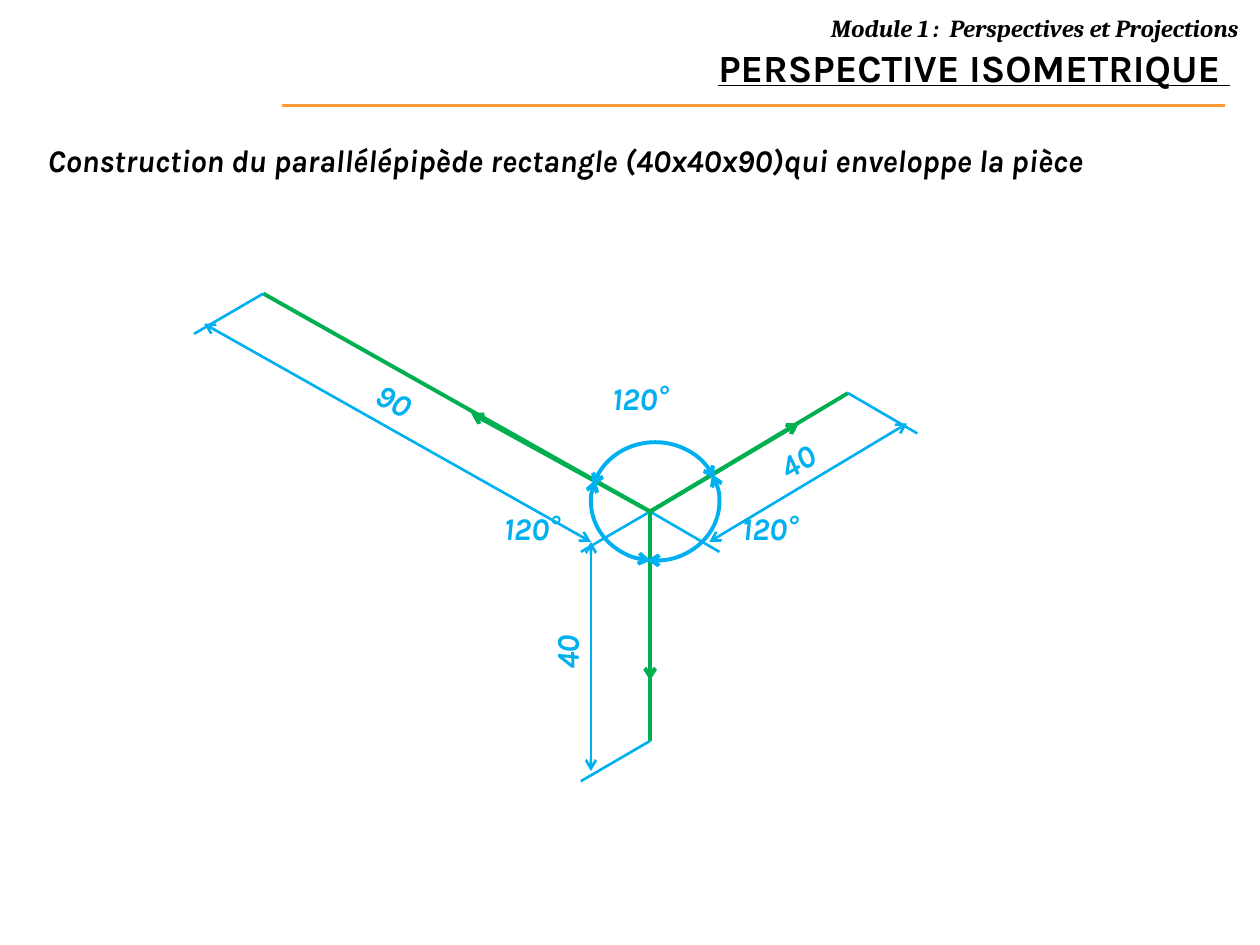
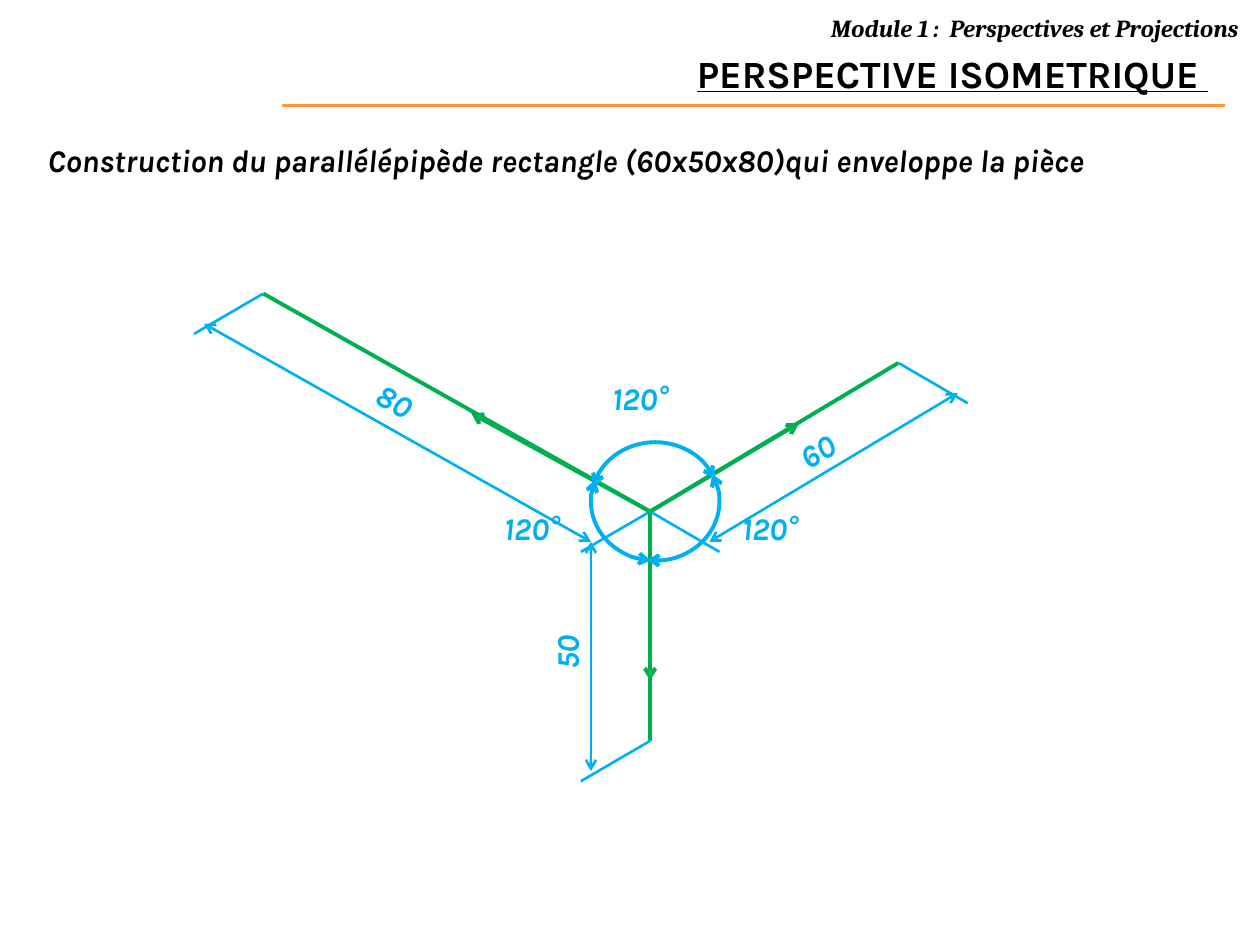
from dataclasses import dataclass
from typing import Optional

from lxml.etree import SubElement
from pptx import Presentation
from pptx.dml.color import RGBColor
from pptx.enum.shapes import MSO_CONNECTOR, MSO_SHAPE
from pptx.enum.text import MSO_ANCHOR, MSO_AUTO_SIZE, PP_ALIGN
from pptx.oxml.ns import qn
from pptx.util import Inches, Pt

COLORS = {
    "text": "000000",
    "background": "FFFFFF",
    "rule": "FF9933",
    "axis": "00B050",
    "dimension": "00B0F0",
}
BODY_FONT = "Karla"
HEADER_FONT = "Cambria"
AXIS_WIDTH = 2.25
THIN_WIDTH = 1.5
TITLE_ONLY_LAYOUT = 5

Point = tuple[float, float]

ORIGIN: Point = (5.16, 4.06)
EXTENSION: Point = (0.55, 0.32)  # extension line, from axis to its outer end
DIMENSION_OFFSET: Point = (0.47, 0.24)  # dimension line, from its axis
ARC_BOX = (4.69, 3.51, 1.02, 0.94)
ARC_ANGLES = [(194.1, 338.9), (334.4, 97.9), (94.3, 200)]  # clockwise degrees from the right
ANGLE_LABELS: list[Point] = [(5.79, 3.99), (4.76, 2.96), (3.9, 3.99)]


@dataclass(frozen=True)
class Axis:
    tip: Point
    arrow: Point
    side: int  # 1: dimensioned on the right, -1: on the left
    length: int
    label_at: Point
    label_rotation: float


@dataclass(frozen=True)
class IsometricSlide:
    title_at: Point
    right: int
    down: int
    left: int
    right_tip: Point
    right_label_at: Point

    def axes(self) -> list[Axis]:
        return [
            Axis(self.right_tip, (6.34, 3.36), 1, self.right, self.right_label_at, 329.9),
            Axis((2.09, 2.33), (3.74, 3.28), -1, self.left, (2.87, 3.01), 29.3),
            Axis((5.16, 5.88), (5.16, 5.4), -1, self.down, (4.21, 4.86), 270),
        ]


SLIDES = [
    IsometricSlide((2.18, 0.3), right=40, down=40, left=90,
                   right_tip=(6.73, 3.12), right_label_at=(6.1, 3.41)),
    IsometricSlide((2.01, 0.35), right=60, down=50, left=80,
                   right_tip=(7.13, 2.88), right_label_at=(6.26, 3.33)),
]


def color(name: str) -> RGBColor:
    return RGBColor.from_string(COLORS[name])


def shifted(point: Point, offset: Point, side: int) -> Point:
    """Move a point down, and to the right (side 1) or left (side -1)."""
    return point[0] + side * offset[0], point[1] + offset[1]


def write_text(shape, text: str, *, size: float, font_name: str = BODY_FONT,
               color_name: str = "text", italic: bool = False, underline: bool = False,
               align: PP_ALIGN = PP_ALIGN.LEFT, line_spacing: Optional[float] = None) -> None:
    frame = shape.text_frame
    frame.word_wrap = True
    frame.auto_size = MSO_AUTO_SIZE.NONE
    frame.vertical_anchor = MSO_ANCHOR.TOP
    paragraph = frame.paragraphs[0]
    paragraph.alignment = align
    paragraph.line_spacing = line_spacing
    run = paragraph.add_run()
    run.text = text
    run.font.name = font_name
    run.font.size = Pt(size)
    run.font.bold = True
    run.font.italic = italic
    run.font.underline = underline
    run.font.color.rgb = color(color_name)


def add_text(slide, text: str, at: Point, width: float, height: float,
             rotation: float = 0, color_name: str = "text") -> None:
    box = slide.shapes.add_textbox(Inches(at[0]), Inches(at[1]), Inches(width), Inches(height))
    box.rotation = rotation
    write_text(box, text, size=18, italic=True, color_name=color_name)


def style_line(shape, color_name: str, width: float, head: bool, tail: bool) -> None:
    shape.line.color.rgb = color(color_name)
    shape.line.width = Pt(width)
    line = shape.element.spPr.find(qn("a:ln"))
    for tag, wanted in (("a:headEnd", head), ("a:tailEnd", tail)):
        if wanted:
            SubElement(line, qn(tag), type="arrow")


def add_line(slide, start: Point, end: Point, color_name: str, width: float = THIN_WIDTH,
             head: bool = False, tail: bool = False) -> None:
    connector = slide.shapes.add_connector(
        MSO_CONNECTOR.STRAIGHT, *(Inches(value) for value in (*start, *end)))
    style_line(connector, color_name, width, head, tail)
    SubElement(connector.element.spPr, qn("a:effectLst"))


def add_angle_arc(slide, start: float, end: float) -> None:
    arc = slide.shapes.add_shape(MSO_SHAPE.ARC, *(Inches(value) for value in ARC_BOX))
    arc.shadow.inherit = False
    arc.fill.background()
    # Arc angles are stored in 60000ths of a degree; adjustments count in 100000ths.
    arc.adjustments[0] = start * 0.6
    arc.adjustments[1] = end * 0.6
    style_line(arc, "dimension", AXIS_WIDTH, head=True, tail=True)


def add_header(slide, title_at: Point) -> None:
    add_line(slide, (2.24, 0.84), (9.72, 0.84), "rule")
    band = slide.shapes.add_shape(
        MSO_SHAPE.RECTANGLE, Inches(3.74), Inches(0.02), Inches(6.19), Inches(0.34))
    band.shadow.inherit = False
    band.fill.solid()
    band.fill.fore_color.rgb = color("background")
    band.line.fill.background()
    write_text(band, "Module 1 :  Perspectives et Projections", size=14,
               font_name=HEADER_FONT, italic=True, align=PP_ALIGN.RIGHT, line_spacing=1.15)

    title = slide.shapes.title
    title.left, title.top = Inches(title_at[0]), Inches(title_at[1])
    title.width, title.height = Inches(7.68), Inches(1.17)
    write_text(title, "PERSPECTIVE ISOMETRIQUE ", size=22, underline=True, align=PP_ALIGN.RIGHT)


def add_dimension(slide, axis: Axis) -> None:
    add_line(slide, axis.tip, shifted(axis.tip, EXTENSION, axis.side), "dimension")
    add_line(slide, shifted(ORIGIN, DIMENSION_OFFSET, axis.side),
             shifted(axis.tip, DIMENSION_OFFSET, axis.side), "dimension", head=True, tail=True)
    add_text(slide, str(axis.length), axis.label_at, 0.64, 0.47,
             rotation=axis.label_rotation, color_name="dimension")


def add_isometric_slide(presentation, content: IsometricSlide) -> None:
    slide = presentation.slides.add_slide(presentation.slide_layouts[TITLE_ONLY_LAYOUT])
    add_header(slide, content.title_at)
    size = f"{content.right}x{content.down}x{content.left}"
    add_text(slide, f"Construction du parallélépipède rectangle ({size})qui enveloppe la pièce",
             (0.28, 1.07), 9.37, 0.58)

    axes = content.axes()
    for axis in axes:
        add_line(slide, ORIGIN, axis.tip, "axis", AXIS_WIDTH)
    for side in (1, -1):
        add_line(slide, ORIGIN, shifted(ORIGIN, EXTENSION, side), "dimension")
    for axis in axes:
        add_dimension(slide, axis)
    for axis in axes:
        add_line(slide, ORIGIN, axis.arrow, "axis", AXIS_WIDTH, tail=True)

    for start, end in ARC_ANGLES:
        add_angle_arc(slide, start, end)
    for label_at in ANGLE_LABELS:
        add_text(slide, "120°", label_at, 0.79, 0.47, color_name="dimension")


def main() -> None:
    presentation = Presentation()
    presentation.slide_width = Inches(10)
    presentation.slide_height = Inches(7.5)
    for content in SLIDES:
        add_isometric_slide(presentation, content)
    presentation.save("out.pptx")


if __name__ == "__main__":
    main()
